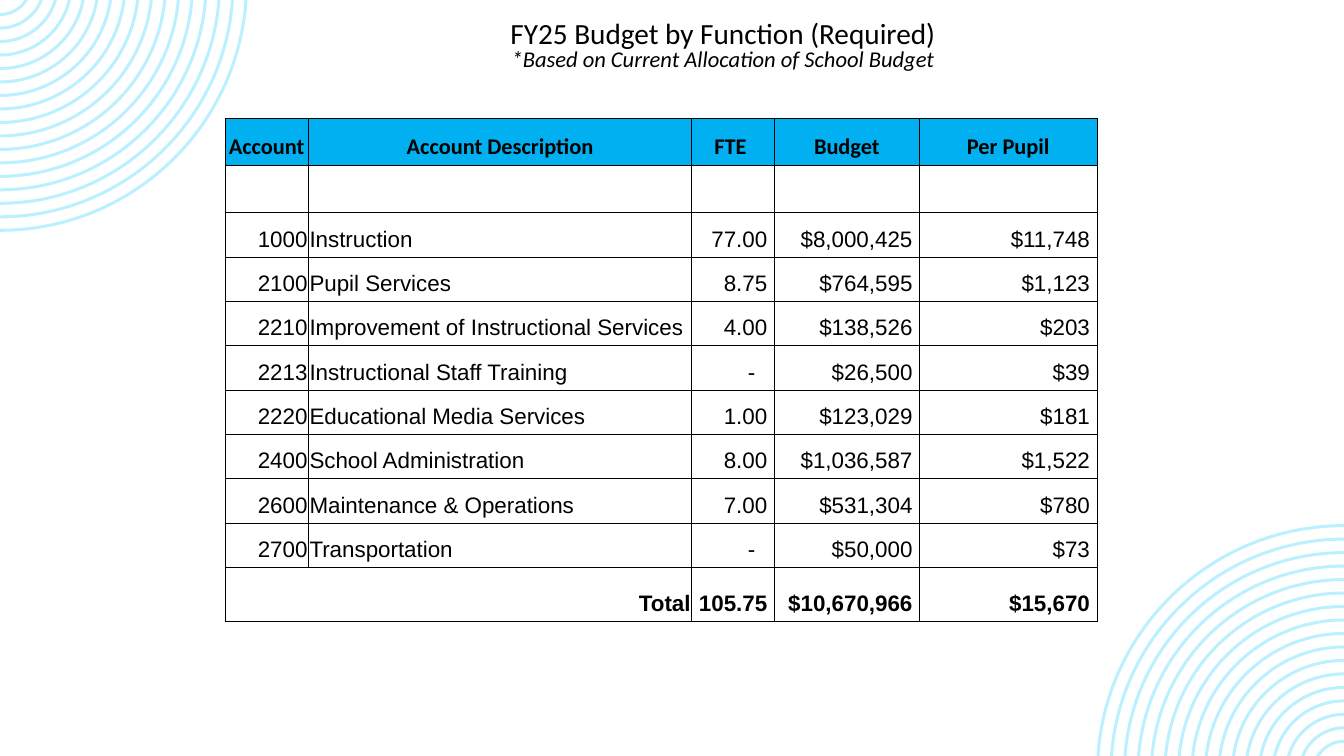
from math import asin, cos, pi, sin, tan

from lxml.etree import SubElement
from pptx import Presentation
from pptx.dml.color import RGBColor
from pptx.enum.text import MSO_ANCHOR, PP_ALIGN
from pptx.oxml.ns import qn
from pptx.util import Inches, Pt

WIDE, HIGH = 13.33, 7.5
COLS = [0.83, 3.8, 0.82, 1.44, 1.76]
HEADS = ["Account", "Account Description", "FTE ", "Budget", "Per Pupil"]
ITEMS = [
    ["1000", "Instruction", "77.00", "$8,000,425", "$11,748"],
    ["2100", "Pupil Services", "8.75", "$764,595", "$1,123"],
    ["2210", "Improvement of Instructional Services", "4.00", "$138,526", "$203"],
    ["2213", "Instructional Staff Training", "-", "$26,500", "$39"],
    ["2220", "Educational Media Services", "1.00", "$123,029", "$181"],
    ["2400", "School Administration", "8.00", "$1,036,587", "$1,522"],
    ["2600", "Maintenance & Operations", "7.00", "$531,304", "$780"],
    ["2700", "Transportation", "-", "$50,000", "$73"],
]
TOTAL = ["Total", "", "105.75", "$10,670,966", "$15,670"]


def color(code):
    return RGBColor.from_string(code)


def style(para, face, size, bold=False, slant=False):
    for run in para.runs:
        font = run.font
        font.name, font.size = face, Pt(size)
        font.bold, font.italic = bold, slant
        font.color.rgb = color("000000")


# Four control points of an arc from the slide edge to the vertical
def curve(radius, drop):
    turn = asin(drop / radius)
    pull = 4 / 3 * tan((pi / 2 - turn) / 4) * radius
    x, y = radius * cos(turn), radius * sin(turn) - drop
    end = radius - drop
    return [(x, y), (x - pull * sin(turn), y + pull * cos(turn)),
            (pull, end), (0, end)]


# Corner rings: thin curved bands around a centre just outside the edge
def rings(slide, x, y, w, h, flip=False):
    drop, inner, count, thick = 0.16, 0.32, 17, 0.03
    outer = h + drop
    form = slide.shapes.build_freeform(Inches(x), Inches(y))
    form.add_line_segments([(Inches(x + w), Inches(y)),
                            (Inches(x + w), Inches(y + h)),
                            (Inches(x), Inches(y + h))])
    shape = form.convert_to_shape()
    track = shape._element.find(".//" + qn("a:path"))
    for part in list(track):
        track.remove(part)

    def draw(tag, points):
        step = SubElement(track, qn(tag))
        for u, v in points:
            if flip:
                u, v = w - u, h - v
            SubElement(step, qn("a:pt"), x=str(Inches(u)), y=str(Inches(v)))

    for i in range(count):
        radius = outer - (outer - inner) * i / (count - 1)
        far = curve(radius, drop)
        near = curve(radius - thick, drop)[::-1]
        draw("a:moveTo", far[:1])
        draw("a:cubicBezTo", far[1:])
        draw("a:lnTo", near[:1])
        draw("a:cubicBezTo", near[1:])
        SubElement(track, qn("a:close"))
    shape.shadow.inherit = False
    shape.fill.solid()
    shape.fill.fore_color.rgb = color("BBF0FF")
    shape.line.fill.background()


# Title with its note
def title(slide, x, y, w, h):
    box = slide.shapes.add_textbox(Inches(x), Inches(y), Inches(w), Inches(h))
    frame = box.text_frame
    frame.word_wrap = True
    frame.vertical_anchor = MSO_ANCHOR.MIDDLE
    frame.margin_bottom = Inches(0.33)
    frame.text = ("FY25 Budget by Function (Required)\n"
                  "*Based on Current Allocation of School Budget")
    for para, size, slant in zip(frame.paragraphs, (20.9, 16.1), (False, True)):
        para.alignment = PP_ALIGN.CENTER
        para.line_spacing = 0.8
        style(para, "Calibri", size, slant=slant)


def border(cell):
    props = cell._tc.get_or_add_tcPr()
    for tag in ("a:lnL", "a:lnR", "a:lnT", "a:lnB"):
        line = SubElement(props, qn(tag), w=str(Pt(0.5)))
        fill = SubElement(line, qn("a:solidFill"))
        SubElement(fill, qn("a:srgbClr"), val="000000")


# Budget table: header, empty row, items and total
def budget(slide, x, y, w, h):
    rows = [HEADS, [""] * len(COLS), *ITEMS, TOTAL]
    last = len(rows) - 1
    table = slide.shapes.add_table(len(rows), len(COLS), Inches(x), Inches(y),
                                   Inches(w), Inches(h)).table
    table.horz_banding = table.first_row = False
    for col, width in zip(table.columns, COLS):
        col.width = Inches(width)
    for r, row in enumerate(rows):
        table.rows[r].height = Inches(0.47 if r < 2 else 0.54 if r == last else 0.44)
        for c, text in enumerate(row):
            cell = table.cell(r, c)
            border(cell)
            if r > 1 and c > 2:
                cell.fill.background()
            else:
                cell.fill.solid()
                cell.fill.fore_color.rgb = color("FFFFFF" if r else "00B0F0")
            cell.vertical_anchor = MSO_ANCHOR.BOTTOM
            cell.margin_left = cell.margin_top = Inches(0.01)
            gap = 0.01 if r == 0 or c < 2 else 0.19 if text == "-" else 0.07
            cell.margin_right = Inches(gap)
            cell.margin_bottom = Inches(0.05)
            cell.text = text
            para = cell.text_frame.paragraphs[0]
            if r == 0:
                para.alignment = PP_ALIGN.CENTER
            elif c == 1:
                para.alignment = PP_ALIGN.LEFT
            else:
                para.alignment = PP_ALIGN.RIGHT
            style(para, "Arial" if r else "Calibri", 16, bold=r in (0, last))
    table.cell(last, 0).merge(table.cell(last, 1))


def main():
    deck = Presentation()
    deck.slide_width, deck.slide_height = Inches(WIDE), Inches(HIGH)
    slide = deck.slides.add_slide(deck.slide_layouts[6])
    w, h = 2.45, 2.3
    rings(slide, 0, 0, w, h)
    rings(slide, WIDE - w, HIGH - h, w, h, flip=True)
    title(slide, 2.67, 0.28, 9, 0.66)
    budget(slide, 2.23, 1.17, 8.65, 4.99)
    deck.save("out.pptx")


if __name__ == "__main__":
    main()
